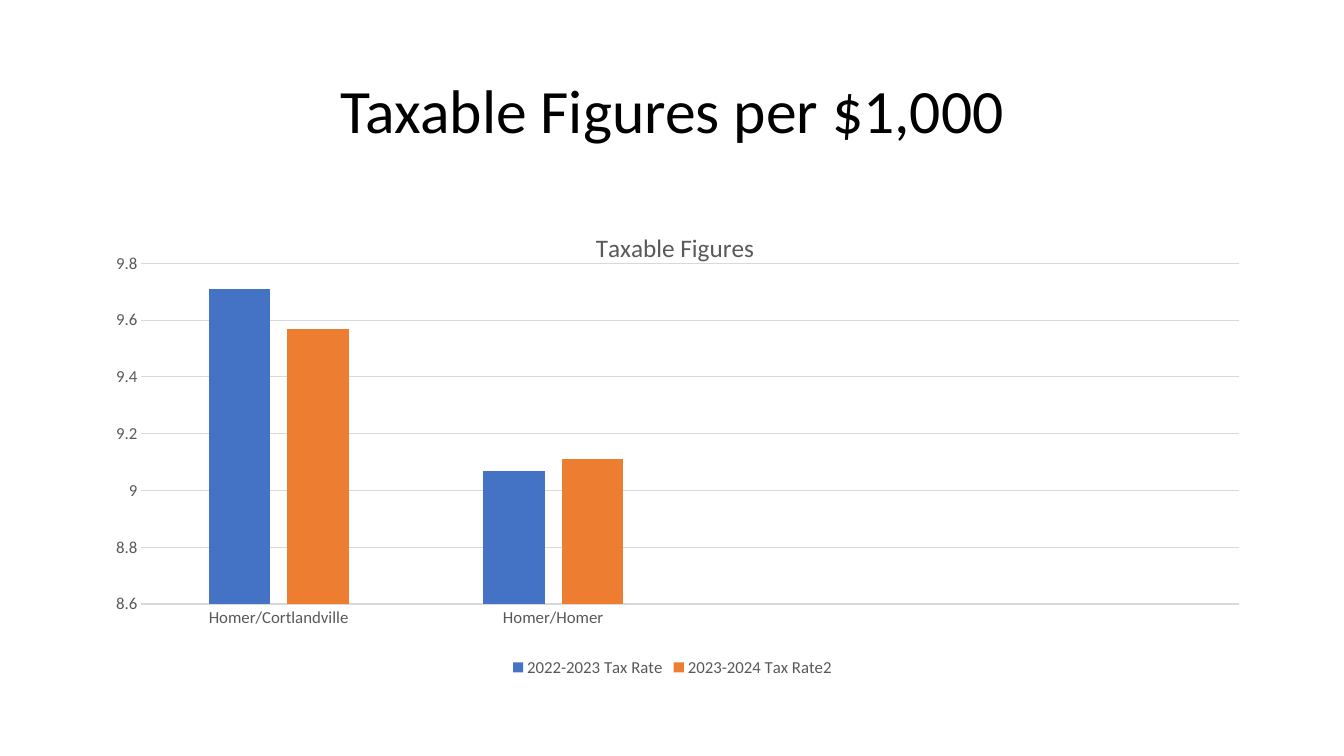
"""Build a slide with a clustered column chart of taxable figures per $1,000."""
import pptx
import pptx.chart.data
import pptx.dml.color
import pptx.enum.chart
import pptx.enum.text
import pptx.oxml
import pptx.oxml.ns
import pptx.util

COLORS = {"title": "000000", "label": "595959", "grid": "D9D9D9"}
FONT = "Calibri"
SERIES = [
    ("2022-2023 Tax Rate", (9.71, 9.07, None, None), "4472C4"),
    ("2023-2024 Tax Rate2", (9.57, 9.11, None, None), "ED7D31"),
]


def style_font(font, size, color):
    font.name = FONT
    font.size = pptx.util.Pt(size)
    font.bold = False
    font.color.rgb = pptx.dml.color.RGBColor.from_string(color)


def add_layout(parent, position, **shares):
    entries = "".join(f'<c:{name} val="{value}"/>' for name, value in shares.items())
    target = '<c:layoutTarget val="inner"/>' if "w" in shares else ""
    for layout in parent.findall(pptx.oxml.ns.qn("c:layout")):
        parent.remove(layout)
    parent.insert(position, pptx.oxml.parse_xml(
        f'<c:layout {pptx.oxml.ns.nsdecls("c")}><c:manualLayout>{target}'
        f'<c:xMode val="edge"/><c:yMode val="edge"/>{entries}</c:manualLayout></c:layout>'))


presentation = pptx.Presentation()
presentation.slide_width = pptx.util.Inches(13.33)
presentation.slide_height = pptx.util.Inches(7.5)
slide = presentation.slides.add_slide(presentation.slide_layouts[6])
left, width = pptx.util.Inches(0.92), pptx.util.Inches(11.5)

title = slide.shapes.add_textbox(left, pptx.util.Inches(0.4), width, pptx.util.Inches(1.45))
title.text_frame.word_wrap = True
title.text_frame.vertical_anchor = pptx.enum.text.MSO_ANCHOR.MIDDLE
title.text_frame.text = "Taxable Figures per $1,000"
paragraph = title.text_frame.paragraphs[0]
paragraph.alignment = pptx.enum.text.PP_ALIGN.CENTER
paragraph.line_spacing = 0.9
style_font(paragraph.runs[0].font, 44, COLORS["title"])

chart_data = pptx.chart.data.CategoryChartData()
chart_data.categories = ["Homer/Cortlandville", "Homer/Homer", "", ""]
for name, values, color in SERIES:
    chart_data.add_series(name, values)
chart = slide.shapes.add_chart(
    pptx.enum.chart.XL_CHART_TYPE.COLUMN_CLUSTERED,
    left, pptx.util.Inches(2), width, pptx.util.Inches(4.76), chart_data).chart
style_font(chart.font, 12, COLORS["label"])

chart.has_title = True
chart.chart_title.text_frame.text = "Taxable Figures"
style_font(chart.chart_title.text_frame.paragraphs[0].runs[0].font, 18, COLORS["label"])
chart.chart_title.include_in_layout = False
add_layout(chart.chart_title._element, 1, x=0.43, y=0.05)

chart.has_legend = True
chart.legend.position = pptx.enum.chart.XL_LEGEND_POSITION.BOTTOM
chart.legend.include_in_layout = False
style_font(chart.legend.font, 12, COLORS["label"])

plot = chart.plots[0]
plot.vary_by_categories = False
plot.gap_width = 219
plot.overlap = -27
for series, (name, values, color) in zip(plot.series, SERIES):
    series.format.fill.solid()
    series.format.fill.fore_color.rgb = pptx.dml.color.RGBColor.from_string(color)
add_layout(chart._chartSpace.chart.plotArea, 0, x=0.042, y=0.129, w=0.947, h=0.71)

value_axis, category_axis = chart.value_axis, chart.category_axis
value_axis.minimum_scale = 8.6
value_axis.maximum_scale = 9.8
value_axis.major_unit = 0.2
value_axis.has_major_gridlines = True
for axis in (value_axis, category_axis):
    axis.major_tick_mark = pptx.enum.chart.XL_TICK_MARK.NONE
    axis.minor_tick_mark = pptx.enum.chart.XL_TICK_MARK.NONE
    style_font(axis.tick_labels.font, 12, COLORS["label"])
for line in (value_axis.major_gridlines.format.line, category_axis.format.line):
    line.width = pptx.util.Pt(0.75)
    line.color.rgb = pptx.dml.color.RGBColor.from_string(COLORS["grid"])
value_axis.format.line.fill.background()

presentation.save("out.pptx")
